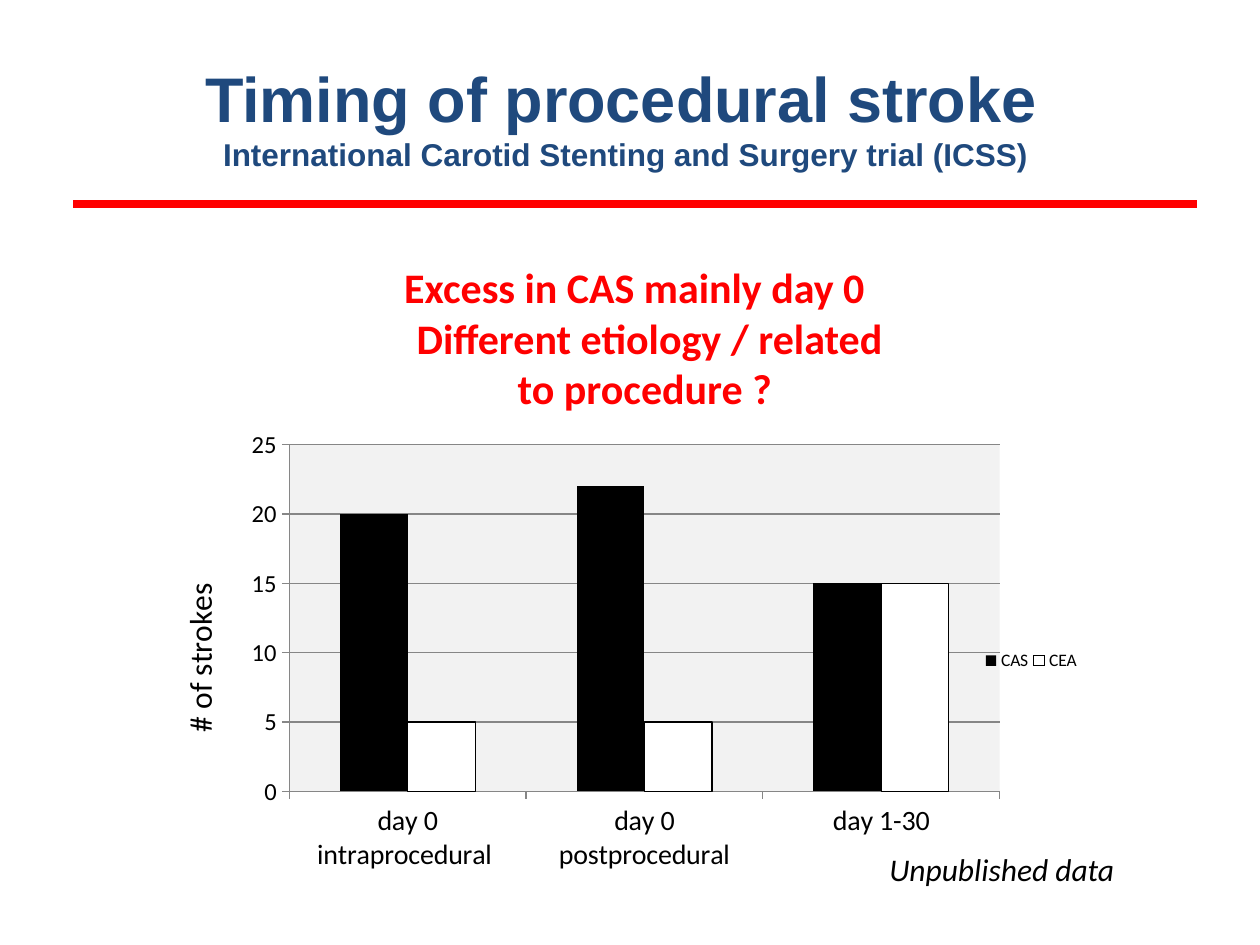
from lxml import etree
from pptx import Presentation
from pptx.chart.data import CategoryChartData
from pptx.dml.color import RGBColor
from pptx.enum.chart import XL_CHART_TYPE, XL_LEGEND_POSITION, XL_TICK_MARK
from pptx.enum.shapes import MSO_CONNECTOR
from pptx.enum.text import MSO_ANCHOR, PP_ALIGN
from pptx.oxml.ns import qn
from pptx.util import Inches, Pt

NAVY = RGBColor(0x1F, 0x49, 0x7D)
RED = RGBColor(0xFF, 0x00, 0x00)
BLACK = RGBColor(0x00, 0x00, 0x00)
WHITE = RGBColor(0xFF, 0xFF, 0xFF)
GRAY = RGBColor(0x86, 0x86, 0x86)
PLOT_FILL = RGBColor(0xF2, 0xF2, 0xF2)

COLUMNS = XL_CHART_TYPE.COLUMN_CLUSTERED
LEGEND_RIGHT = XL_LEGEND_POSITION.RIGHT
TICK_OUTSIDE = XL_TICK_MARK.OUTSIDE
STRAIGHT = MSO_CONNECTOR.STRAIGHT
MIDDLE, TOP = MSO_ANCHOR.MIDDLE, MSO_ANCHOR.TOP
LEFT, CENTER = PP_ALIGN.LEFT, PP_ALIGN.CENTER


def style_font(font, size, color, name="Calibri", bold=False, italic=False):
    font.size = Pt(size)
    font.name = name
    font.bold = bold
    font.italic = italic
    font.color.rgb = color


def add_text(page, bounds, text, alignments, sizes, color, anchor=TOP, **style):
    box = page.shapes.add_textbox(*map(Inches, bounds))
    frame = box.text_frame
    frame.word_wrap = True
    frame.vertical_anchor = anchor
    frame.text = text
    for para, alignment in zip(frame.paragraphs, alignments):
        para.alignment = alignment
        for span, size in zip(para.runs, sizes):
            style_font(span.font, size, color, **style)


def add_rule(page, left, right, top):
    rule = page.shapes.add_connector(
        STRAIGHT, Inches(left), Inches(top), Inches(right), Inches(top))
    rule.line.color.rgb = RED
    rule.line.width = Pt(5)
    etree.SubElement(rule._element.spPr, qn("a:effectLst"))


def set_layout(element, index, inner=False, **fractions):
    for old in element.findall(qn("c:layout")):
        element.remove(old)
    layout = etree.Element(qn("c:layout"))
    manual = etree.SubElement(layout, qn("c:manualLayout"))
    settings = {"layoutTarget": "inner"} if inner else {}
    settings.update(xMode="edge", yMode="edge", **fractions)
    for tag, value in settings.items():
        etree.SubElement(manual, qn(f"c:{tag}")).set("val", str(value))
    element.insert(index, layout)


def fill_plot_area(plot_area, color):
    properties = etree.SubElement(plot_area, qn("c:spPr"))
    fill = etree.SubElement(properties, qn("a:solidFill"))
    etree.SubElement(fill, qn("a:srgbClr")).set("val", str(color))


def style_axis(axis, size):
    axis.major_tick_mark = TICK_OUTSIDE
    axis.format.line.color.rgb = GRAY
    style_font(axis.tick_labels.font, size, BLACK)


def add_stroke_chart(page):
    data = CategoryChartData()
    data.categories = ["day 0 intraprocedural ", "day 0 postprocedural", "day 1-30"]
    data.add_series("CAS", (20, 22, 15))
    data.add_series("CEA", (5, 5, 15))
    bounds = map(Inches, (1.22, 3.34, 7.37, 3.66))
    chart = page.shapes.add_chart(COLUMNS, *bounds, data).chart
    chart.has_title = False
    style_font(chart.font, 10, BLACK)

    plot = chart.plots[0]
    plot.gap_width = 150
    plot.overlap = 0
    plot.vary_by_categories = False
    for series, color in zip(plot.series, (BLACK, WHITE)):
        series.format.fill.solid()
        series.format.fill.fore_color.rgb = color
    series.format.line.color.rgb = BLACK
    series.format.line.width = Pt(0.75)

    style_axis(chart.category_axis, 16)
    values = chart.value_axis
    style_axis(values, 14)
    values.minimum_scale = 0
    values.maximum_scale = 25
    values.major_unit = 5
    values.has_major_gridlines = True
    values.major_gridlines.format.line.color.rgb = GRAY
    title = values.axis_title
    title.text_frame.text = "# of strokes"
    style_font(title.text_frame.paragraphs[0].runs[0].font, 18, BLACK)
    set_layout(title._element, 1, x=0.02, y=0.34)

    chart.has_legend = True
    chart.legend.position = LEGEND_RIGHT
    chart.legend.include_in_layout = False
    set_layout(chart.legend._element, 1, x=0.89, y=0.49, w=0.13, h=0.06)

    plot_area = chart._chartSpace.chart.plotArea
    set_layout(plot_area, 0, inner=True, x=0.146, y=0.052, w=0.765, h=0.752)
    fill_plot_area(plot_area, PLOT_FILL)


def main():
    deck = Presentation()
    deck.slide_width = Inches(10)
    deck.slide_height = Inches(7.5)
    page = deck.slides.add_slide(deck.slide_layouts[6])
    add_text(page, (0.5, 0.3, 9, 1.25),
             "Timing of procedural stroke \v"
             "International Carotid Stenting and Surgery trial (ICSS) ",
             [CENTER], [36, 18], NAVY, MIDDLE, name="Arial", bold=True)
    add_rule(page, 0.58, 9.5, 1.62)
    add_stroke_chart(page)
    add_text(page, (3.11, 2.03, 4.09, 1.31),
             "Excess in CAS mainly day 0\nDifferent etiology / related to procedure ? ",
             [LEFT, CENTER], [24], RED, bold=True)
    add_text(page, (6.96, 6.7, 2.54, 0.4), "Unpublished data",
             [LEFT], [18], BLACK, italic=True)
    deck.save("out.pptx")


if __name__ == "__main__":
    main()
